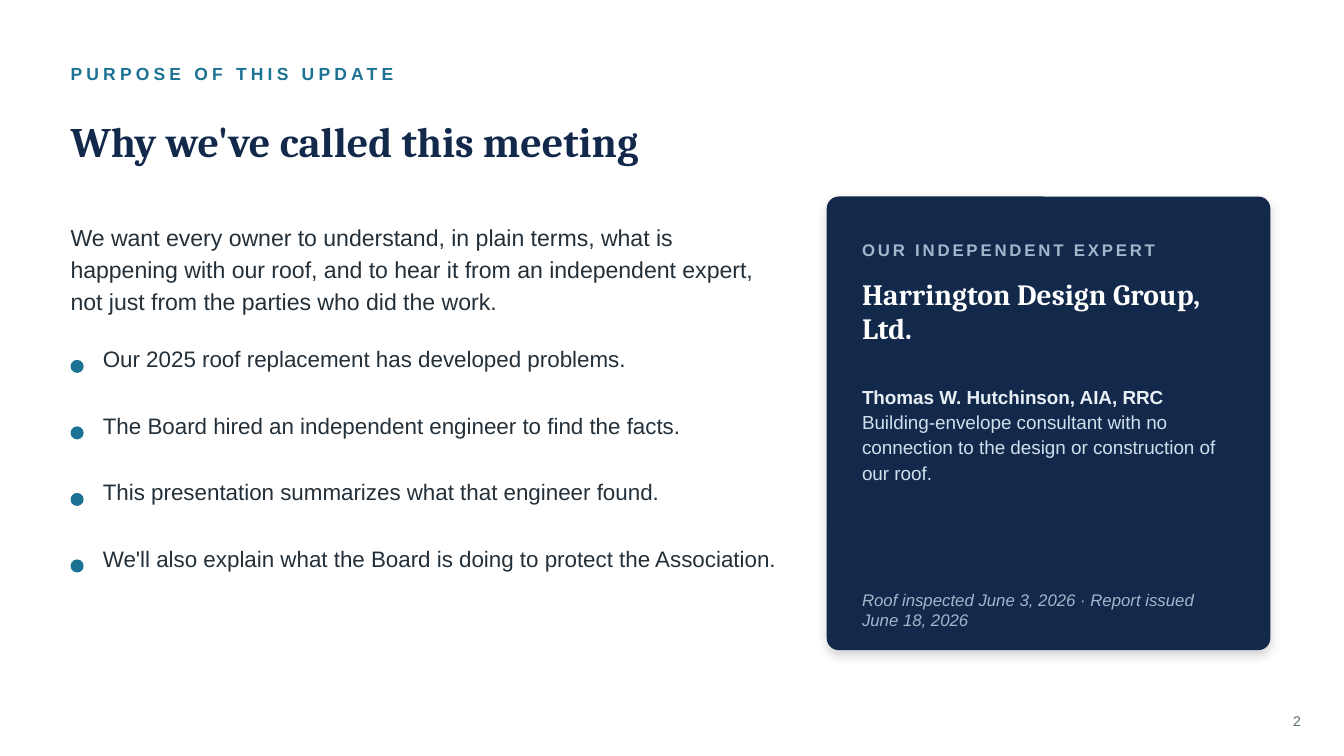
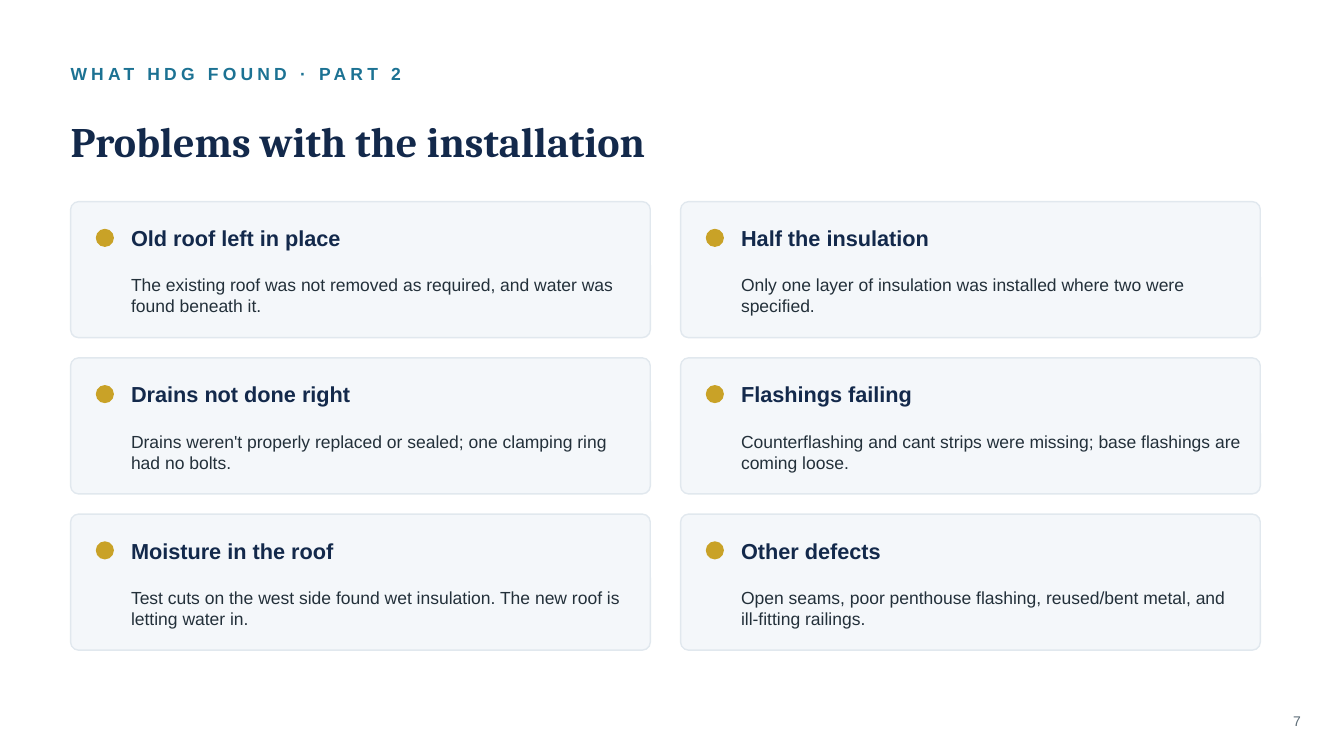
from dataclasses import dataclass

import lxml.etree
import pptx
import pptx.dml.color
import pptx.enum.shapes
import pptx.enum.text
import pptx.oxml.ns
import pptx.util

Inches = pptx.util.Inches
ALIGN = pptx.enum.text.PP_ALIGN
ANCHOR = pptx.enum.text.MSO_ANCHOR
SHAPE = pptx.enum.shapes.MSO_SHAPE


@dataclass(frozen=True)
class TextStyle:
    size: float
    color: str
    name: str = "Arial"
    bold: bool = False
    italic: bool = False
    tracking: float = 0
    line_spacing: float = 1.0
    align: ALIGN = ALIGN.LEFT


class Theme:
    navy, teal, gold = "13294B", "1C7293", "C9A227"
    ink, gray, white = "23303A", "5B6B76", "FFFFFF"
    mist, pale, frost = "9FB8CC", "CFE0EC", "E7EFF5"
    card_fill, card_line = "F4F7FA", "E1E8EE"
    left = 0.7

    kicker = TextStyle(12.5, teal, bold=True, tracking=3)
    title = TextStyle(30, navy, "Cambria", bold=True, line_spacing=0.98)
    page = TextStyle(10, gray, align=ALIGN.RIGHT)
    lead = TextStyle(16.5, ink, line_spacing=1.15)
    point = TextStyle(16, ink, line_spacing=1.02)
    panel_label = TextStyle(12, mist, bold=True, tracking=2)
    panel_name = TextStyle(21, white, "Cambria", bold=True, line_spacing=0.95)
    person = TextStyle(13.5, frost, bold=True, line_spacing=1.12)
    role = TextStyle(13.5, pale, line_spacing=1.12)
    panel_note = TextStyle(12, mist, italic=True)
    card_head = TextStyle(15.5, navy, bold=True)
    card_body = TextStyle(12.5, ink)


def rgb(color):
    return pptx.dml.color.RGBColor.from_string(color)


def write(tf, lines, anchor=ANCHOR.MIDDLE, inset=True):
    """Fill a text frame with (text, style) lines, one paragraph each."""
    tf.word_wrap = True
    tf.auto_size = pptx.enum.text.MSO_AUTO_SIZE.NONE
    tf.vertical_anchor = anchor
    if not inset:
        for side in ("left", "top", "right", "bottom"):
            setattr(tf, f"margin_{side}", 0)
    for i, (text, style) in enumerate(lines):
        p = tf.add_paragraph() if i else tf.paragraphs[0]
        p.alignment = style.align
        p.line_spacing = style.line_spacing
        r = p.add_run()
        r.text = text
        for key in ("name", "bold", "italic"):
            setattr(r.font, key, getattr(style, key))
        r.font.size = pptx.util.Pt(style.size)
        r.font.color.rgb = rgb(style.color)
        if style.tracking:
            r._r.get_or_add_rPr().set("spc", str(int(style.tracking * 100)))


def add_text(s, at, *lines, anchor=ANCHOR.MIDDLE, inset=False):
    box = s.shapes.add_textbox(*map(Inches, at))
    write(box.text_frame, lines, anchor, inset)


def add_filled(s, kind, at, fill, line=None, adjust=None):
    sp = s.shapes.add_shape(kind, *map(Inches, at))
    sp.shadow.inherit = False
    sp.fill.solid()
    sp.fill.fore_color.rgb = rgb(fill)
    if line:
        sp.line.color.rgb = rgb(line)
        sp.line.width = pptx.util.Pt(1)
    else:
        sp.line.fill.background()
    if adjust is not None:
        sp.adjustments[0] = adjust
    return sp


def add_dot(s, x, y, size, color):
    add_filled(s, SHAPE.OVAL, (x, y, size, size), color)


def add_soft_shadow(sp, blur=8, distance=3, angle=90, opacity=18):
    qn = pptx.oxml.ns.qn
    effects = sp._element.spPr.find(qn("a:effectLst"))
    shadow = lxml.etree.SubElement(
        effects, qn("a:outerShdw"), blurRad=str(pptx.util.Pt(blur)),
        dist=str(pptx.util.Pt(distance)), dir=str(angle * 60000),
        algn="bl", rotWithShape="0")
    color = lxml.etree.SubElement(shadow, qn("a:srgbClr"), val="000000")
    lxml.etree.SubElement(color, qn("a:alpha"), val=str(opacity * 1000))


def add_slide(prs, kicker, title, page):
    s = prs.slides.add_slide(prs.slide_layouts[5])
    sp = s.shapes.title
    sp.left, sp.top, sp.width, sp.height = map(Inches, (Theme.left, 0.92, 11.9, 1))
    write(sp.text_frame, [(title, Theme.title)], inset=False)
    add_text(s, (Theme.left, 0.55, 11, 0.35), (kicker, Theme.kicker))
    add_text(s, (12.6, 7, 0.4, 0.3), (page, Theme.page), inset=True)
    return s


def add_points(s, points, top=3.42, pitch=0.66):
    for i, text in enumerate(points):
        y = top + i * pitch
        add_dot(s, Theme.left, y + 0.15, 0.13, Theme.teal)
        add_text(s, (1.02, y, 6.68, pitch), (text, Theme.point), anchor=ANCHOR.TOP)


def add_expert_panel(s, label, name, person, role, note):
    panel = add_filled(s, SHAPE.ROUNDED_RECTANGLE, (8.2, 1.95, 4.4, 4.5),
                       Theme.navy, adjust=0.027)
    add_soft_shadow(panel)
    x, width = 8.55, 3.7
    add_text(s, (x, 2.3, width, 0.35), (label, Theme.panel_label))
    add_text(s, (x, 2.75, width + 0.05, 0.7), (name, Theme.panel_name))
    add_text(s, (x, 3.55, width, 1.5), (person, Theme.person), (role, Theme.role))
    add_text(s, (x, 5.75, width, 0.6), (note, Theme.panel_note))


def add_card(s, x, y, width, height, head, body):
    add_filled(s, SHAPE.ROUNDED_RECTANGLE, (x, y, width, height),
               Theme.card_fill, Theme.card_line, 0.059)
    add_dot(s, x + 0.25, y + 0.27, 0.18, Theme.gold)
    add_text(s, (x + 0.6, y + 0.16, 5, 0.4), (head, Theme.card_head))
    add_text(s, (x + 0.6, y + 0.58, 5, 0.7), (body, Theme.card_body))


def add_card_grid(s, cards, columns=2, top=2, width=5.75, height=1.35):
    gap_x, gap_y = 0.3, 0.2
    for i, (head, body) in enumerate(cards):
        row, column = divmod(i, columns)
        add_card(s, Theme.left + column * (width + gap_x),
                 top + row * (height + gap_y), width, height, head, body)


def build_purpose(prs):
    s = add_slide(prs, "PURPOSE OF THIS UPDATE", "Why we've called this meeting", "2")
    add_text(s, (Theme.left, 1.95, 7, 1.4), (
        "We want every owner to understand, in plain terms, what is happening "
        "with our roof, and to hear it from an independent expert, not just "
        "from the parties who did the work.", Theme.lead))
    add_points(s, [
        "Our 2025 roof replacement has developed problems.",
        "The Board hired an independent engineer to find the facts.",
        "This presentation summarizes what that engineer found.",
        "We'll also explain what the Board is doing to protect the Association.",
    ])
    add_expert_panel(
        s, "OUR INDEPENDENT EXPERT", "Harrington Design Group, Ltd.",
        "Thomas W. Hutchinson, AIA, RRC",
        "Building-envelope consultant with no connection to the design or "
        "construction of our roof.",
        "Roof inspected June 3, 2026 · Report issued June 18, 2026")


def build_problems(prs):
    s = add_slide(prs, "WHAT HDG FOUND · PART 2", "Problems with the installation", "7")
    add_card_grid(s, [
        ("Old roof left in place",
         "The existing roof was not removed as required, and water was found beneath it."),
        ("Half the insulation",
         "Only one layer of insulation was installed where two were specified."),
        ("Drains not done right",
         "Drains weren't properly replaced or sealed; one clamping ring had no bolts."),
        ("Flashings failing",
         "Counterflashing and cant strips were missing; base flashings are coming loose."),
        ("Moisture in the roof",
         "Test cuts on the west side found wet insulation. The new roof is letting water in."),
        ("Other defects",
         "Open seams, poor penthouse flashing, reused/bent metal, and ill-fitting railings."),
    ])


def main():
    prs = pptx.Presentation()
    prs.slide_width, prs.slide_height = Inches(13.33), Inches(7.5)
    build_purpose(prs)
    build_problems(prs)
    prs.save("out.pptx")


if __name__ == "__main__":
    main()
